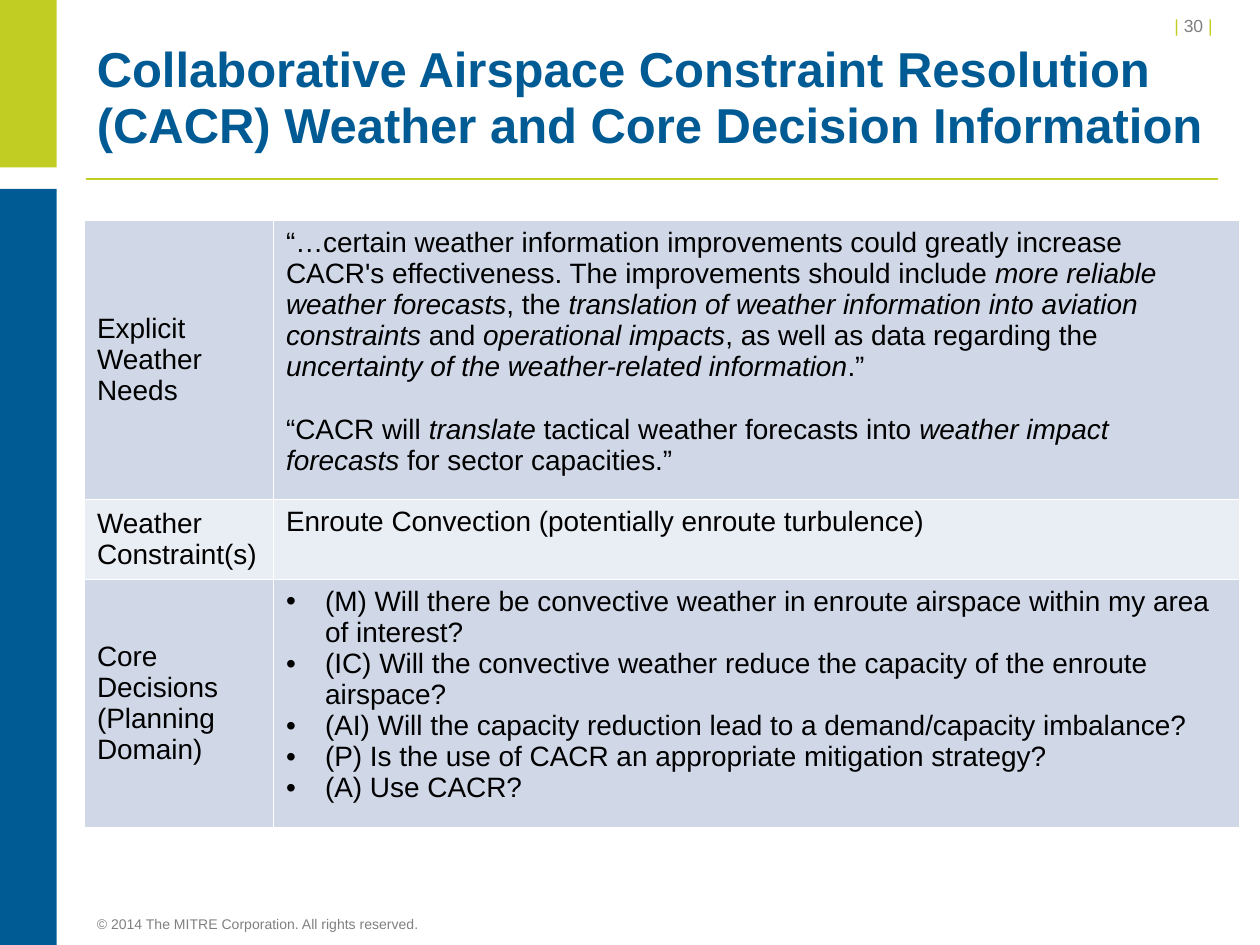
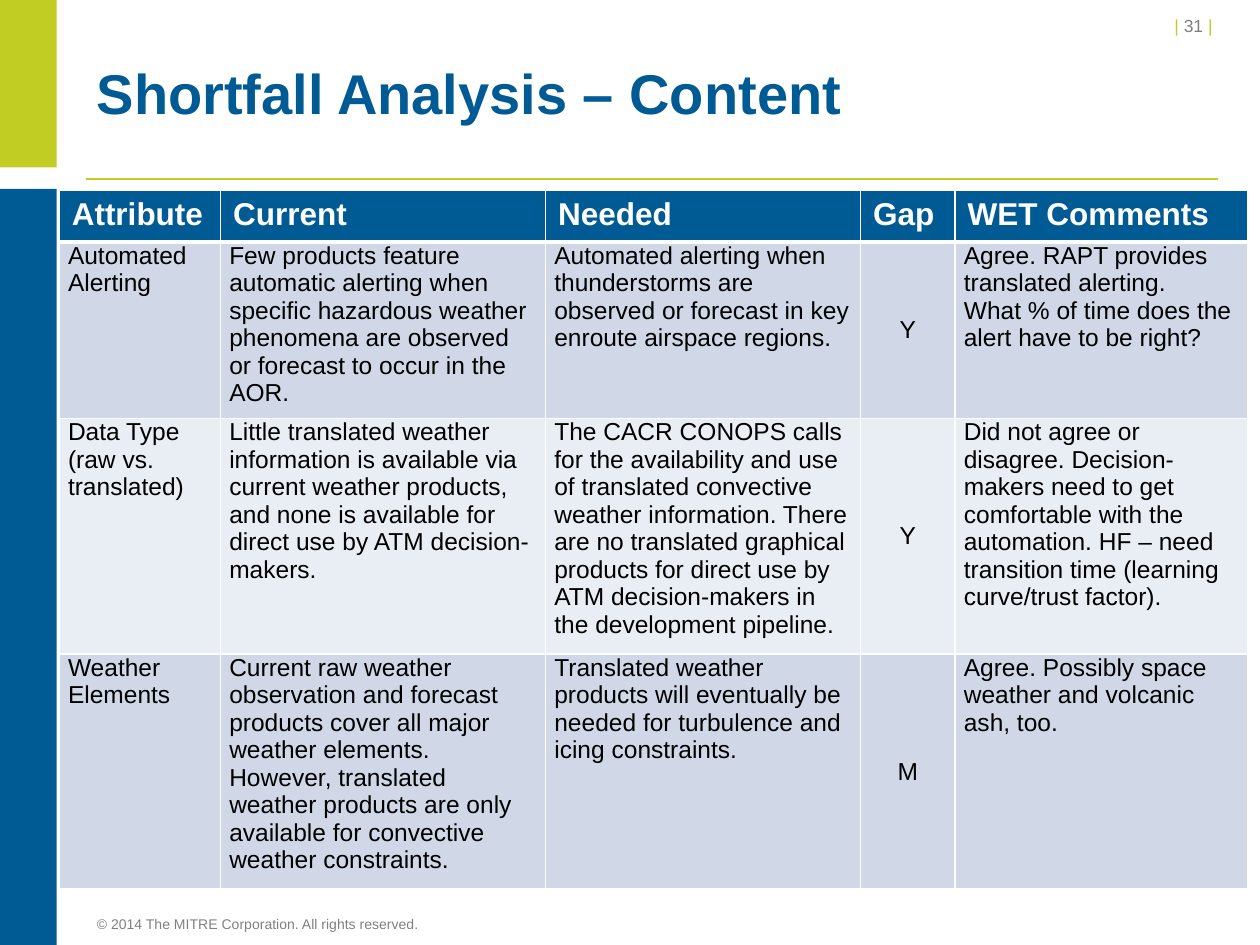
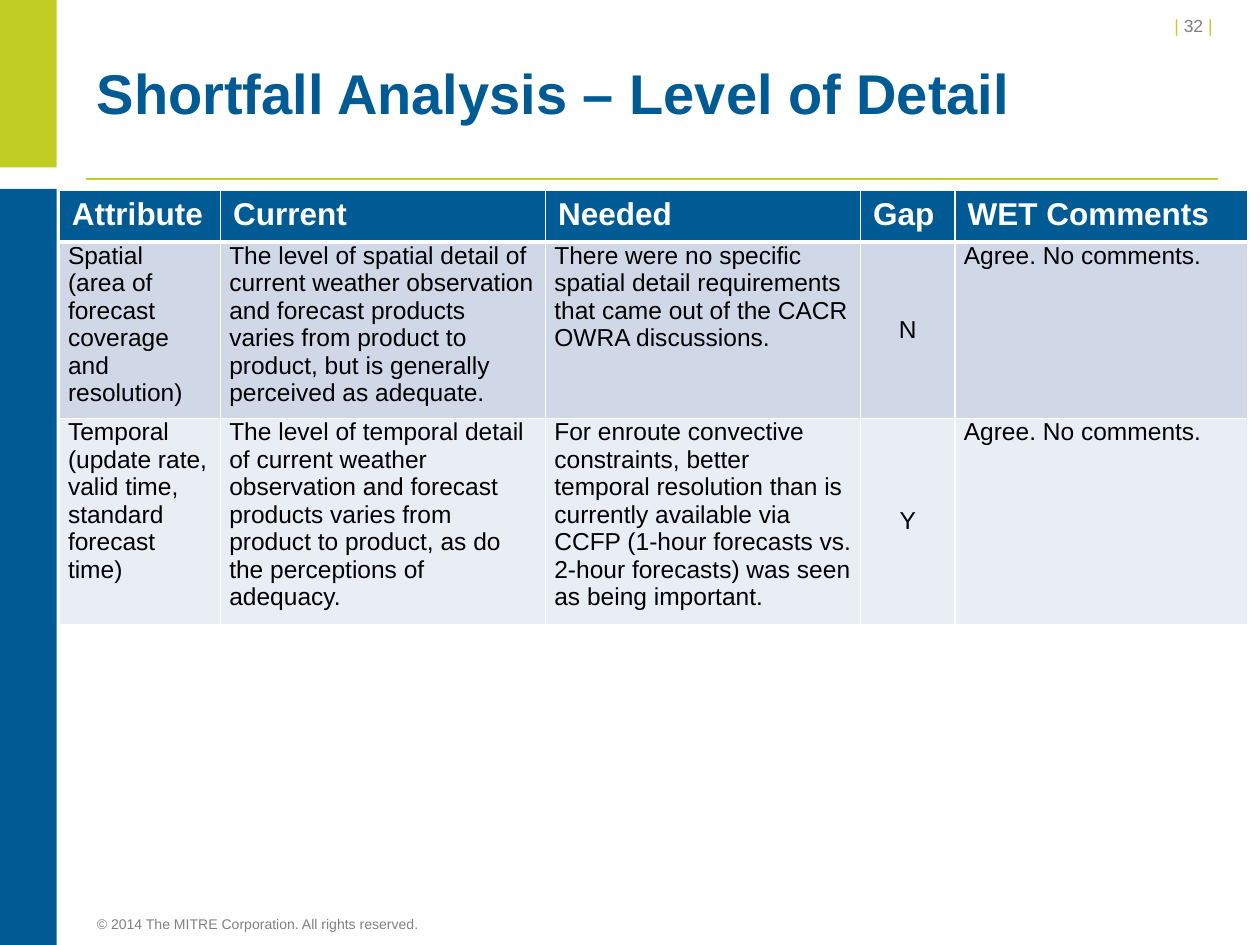
from lxml import etree
from pptx import Presentation
from pptx.dml.color import RGBColor
from pptx.enum.shapes import MSO_CONNECTOR, MSO_SHAPE
from pptx.enum.text import MSO_ANCHOR, PP_ALIGN
from pptx.oxml.ns import qn
from pptx.util import Inches, Pt

COLORS = {
    "lime": "C1CD23",
    "blue": "005B94",
    "gray": "808080",
    "black": "000000",
    "white": "FFFFFF",
    "dark_band": "D0D8E8",
    "light_band": "E9EDF4",
}
FONT = "Arial"
COPYRIGHT = "© 2014 The MITRE Corporation. All rights reserved."

NEEDS_COLUMNS = [1.5, 7.67]
NEEDS_HEIGHTS = [2.07, 0.59, 1.82]
EXPLICIT_NEEDS = [
    "“…certain weather information improvements could greatly increase CACR's "
    "effectiveness. The improvements should include *more reliable weather "
    "forecasts*, the *translation of weather information into aviation "
    "constraints* and *operational impacts*, as well as data regarding the "
    "*uncertainty of the weather-related information*.”",
    "“CACR will *translate* tactical weather forecasts into *weather impact "
    "forecasts *for sector capacities.”",
]
CORE_DECISIONS = [
    "(M) Will there be convective weather in enroute airspace within my area of interest?",
    "(IC) Will the convective weather reduce the capacity of the enroute airspace?",
    "(AI) Will the capacity reduction lead to a demand/capacity imbalance?",
    "(P) Is the use of CACR an appropriate mitigation strategy?",
    "(A) Use CACR?",
]
NEEDS = [
    ("Explicit Weather Needs", EXPLICIT_NEEDS),
    ("Weather Constraint(s)", ["Enroute Convection (potentially enroute turbulence)"]),
    ("Core Decisions (Planning Domain)", CORE_DECISIONS),
]

SHORTFALL_COLUMNS = [1.28, 2.58, 2.5, 0.75, 2.32]
SHORTFALL_HEADINGS = ["Attribute", "Current", "Needed", "Gap", "WET Comments"]
GAP_COLUMN = SHORTFALL_HEADINGS.index("Gap")
HEADING_HEIGHT = 0.41
CONTENT_HEIGHTS = [1.31, 1.75, 1.74]
CONTENT = [
    (
        ["Automated Alerting"],
        ["Few products feature automatic alerting when specific hazardous weather "
         "phenomena are observed or forecast to occur in the AOR."],
        ["Automated alerting when thunderstorms are observed or forecast in key "
         "enroute airspace regions."],
        ["Y"],
        ["Agree. RAPT provides translated alerting.",
         "What % of time does the alert have to be right?"],
    ),
    (
        ["Data Type", "(raw vs. translated)"],
        ["Little translated weather information is available via current weather "
         "products, and none is available for direct use by ATM decision-makers."],
        ["The CACR CONOPS calls for the availability and use of translated "
         "convective weather information. There are no translated graphical "
         "products for direct use by ATM decision-makers in the development pipeline."],
        ["Y"],
        ["Did not agree or disagree. Decision-makers need to get comfortable with "
         "the automation. HF – need transition time (learning curve/trust factor)."],
    ),
    (
        ["Weather Elements"],
        ["Current raw weather observation and forecast products cover all major "
         "weather elements. However, translated weather products are only "
         "available for convective weather constraints."],
        ["Translated weather products will eventually be needed for turbulence "
         "and icing constraints."],
        ["M"],
        ["Agree. Possibly space weather and volcanic ash, too."],
    ),
]
DETAIL_HEIGHTS = [1.31, 1.53]
DETAIL = [
    (
        ["Spatial", "(area of forecast coverage and resolution)"],
        ["The level of spatial detail of current weather observation and forecast "
         "products varies from product to product, but is generally perceived as "
         "adequate."],
        ["There were no specific spatial detail requirements that came out of the "
         "CACR OWRA discussions."],
        ["N"],
        ["Agree. No comments."],
    ),
    (
        ["Temporal", "(update rate, valid time, standard forecast time)"],
        ["The level of temporal detail of current weather observation and forecast "
         "products varies from product to product, as do the perceptions of adequacy."],
        ["For enroute convective constraints, better temporal resolution than is "
         "currently available via CCFP (1-hour forecasts vs. 2-hour forecasts) was "
         "seen as being important."],
        ["Y"],
        ["Agree. No comments."],
    ),
]


def rgb(color):
    return RGBColor.from_string(COLORS[color])


def add_run(paragraph, text, size, color, bold=False, italic=False):
    run = paragraph.add_run()
    run.text = text
    run.font.name = FONT
    run.font.size = Pt(size)
    run.font.bold = bold
    run.font.italic = italic
    run.font.color.rgb = rgb(color)


def add_line_of_text(slide, box, anchor):
    """Add a wrapping text box and return its first paragraph."""
    frame = slide.shapes.add_textbox(*map(Inches, box)).text_frame
    frame.word_wrap = True
    frame.vertical_anchor = anchor
    return frame.paragraphs[0]


def add_band(slide, top, height, color):
    band = slide.shapes.add_shape(
        MSO_SHAPE.RECTANGLE, 0, Inches(top), Inches(0.45), Inches(height))
    band.shadow.inherit = False
    band.fill.solid()
    band.fill.fore_color.rgb = rgb(color)
    band.line.fill.background()


def add_title_rule(slide):
    rule = slide.shapes.add_connector(
        MSO_CONNECTOR.STRAIGHT, Inches(0.68), Inches(1.42), Inches(9.67), Inches(1.42))
    rule.line.color.rgb = rgb("lime")
    rule.line.width = Pt(1)
    etree.SubElement(rule._element.spPr, qn("a:effectLst"))


def add_page_number(slide, number):
    page = add_line_of_text(slide, (8.01, 0.07, 1.75, 0.27), MSO_ANCHOR.TOP)
    page.alignment = PP_ALIGN.RIGHT
    page.space_after = Pt(6)
    for text, color in (("| ", "lime"), (f"{number} ", "gray"), ("| ", "lime")):
        add_run(page, text, 10, color)


def add_framed_slide(deck, number, title, title_size=32):
    """Add a slide with the shared bands, rule, page number, copyright and title."""
    slide = deck.slides.add_slide(deck.slide_layouts[6])
    add_title_rule(slide)
    add_band(slide, 0, 1.33, "lime")
    add_band(slide, 1.5, 6, "blue")
    add_page_number(slide, number)

    copyright_line = add_line_of_text(slide, (0.67, 7.28, 2.95, 0.17), MSO_ANCHOR.BOTTOM)
    copyright_line.line_spacing = Pt(13)
    add_run(copyright_line, COPYRIGHT, 8, "gray")

    heading = add_line_of_text(slide, (0.67, 0.3, 9, 0.95), MSO_ANCHOR.MIDDLE)
    heading.line_spacing = Pt(32)
    add_run(heading, title, title_size, "blue", bold=True)
    return slide


def add_grid(slide, left, top, widths, heights, has_heading):
    grid = slide.shapes.add_table(
        len(heights), len(widths), Inches(left), Inches(top),
        Inches(sum(widths)), Inches(sum(heights))).table
    grid.first_row = has_heading
    grid.horz_banding = False
    for column, width in zip(grid.columns, widths):
        column.width = Inches(width)
    for row, height in zip(grid.rows, heights):
        row.height = Inches(height)
    return grid


def style_cell(cell, fill, top_border=1, bottom_border=1):
    """Give a cell white borders (in points), then its fill."""
    borders = {"lnL": 1, "lnR": 1, "lnT": top_border, "lnB": bottom_border}
    for side, width in borders.items():
        line = etree.SubElement(
            cell._tc.get_or_add_tcPr(), qn(f"a:{side}"), w=str(Pt(width)))
        paint = etree.SubElement(line, qn("a:solidFill"))
        etree.SubElement(paint, qn("a:srgbClr"), val=COLORS["white"])
    cell.fill.solid()
    cell.fill.fore_color.rgb = rgb(fill)


def write_cell(cell, texts, size, color="black", bold=False):
    """Write one paragraph per text; parts between asterisks are italic."""
    frame = cell.text_frame
    for index, text in enumerate(texts):
        paragraph = frame.add_paragraph() if index else frame.paragraphs[0]
        for part_index, part in enumerate(text.split("*")):
            if part:
                add_run(paragraph, part, size, color, bold, part_index % 2 == 1)


def add_bullet(paragraph):
    properties = paragraph._p.get_or_add_pPr()
    properties.set("marL", str(Inches(0.31)))
    properties.set("indent", str(Inches(-0.31)))
    etree.SubElement(properties, qn("a:buFont"), typeface=FONT)
    etree.SubElement(properties, qn("a:buChar"), char="•")


def band_color(row_index):
    return "light_band" if row_index % 2 else "dark_band"


def add_needs_table(slide):
    grid = add_grid(slide, 0.67, 1.75, NEEDS_COLUMNS, NEEDS_HEIGHTS, has_heading=False)
    for row_index, (topic, details) in enumerate(NEEDS):
        topic_cell, details_cell = grid.rows[row_index].cells
        for cell, texts in ((topic_cell, [topic]), (details_cell, details)):
            style_cell(cell, band_color(row_index))
            write_cell(cell, texts, 16)
        topic_cell.vertical_anchor = MSO_ANCHOR.MIDDLE
        if details is EXPLICIT_NEEDS:
            details_cell.text_frame.paragraphs[0].space_after = Pt(18)
        if details is CORE_DECISIONS:
            for decision in details_cell.text_frame.paragraphs:
                add_bullet(decision)


def add_shortfall_table(slide, findings, heights):
    grid = add_grid(slide, 0.47, 1.51, SHORTFALL_COLUMNS,
                    [HEADING_HEIGHT] + heights, has_heading=True)
    for cell, heading in zip(grid.rows[0].cells, SHORTFALL_HEADINGS):
        style_cell(cell, "blue", bottom_border=3)
        write_cell(cell, [heading], 18, "white", bold=True)
    for row_index, finding in enumerate(findings):
        cells = list(grid.rows[row_index + 1].cells)
        for cell, texts in zip(cells, finding):
            style_cell(cell, band_color(row_index), top_border=1 if row_index else 3)
            cell.margin_left = cell.margin_right = Inches(0.07)
            cell.margin_top = cell.margin_bottom = 0
            write_cell(cell, texts, 14)
        gap = cells[GAP_COLUMN]
        gap.vertical_anchor = MSO_ANCHOR.MIDDLE
        gap.text_frame.paragraphs[0].alignment = PP_ALIGN.CENTER


def main():
    deck = Presentation()
    deck.slide_width, deck.slide_height = Inches(10), Inches(7.5)

    needs = add_framed_slide(
        deck, 30, "Collaborative Airspace Constraint Resolution (CACR) "
        "Weather and Core Decision Information", title_size=28)
    add_needs_table(needs)

    content = add_framed_slide(deck, 31, "Shortfall Analysis – Content")
    add_shortfall_table(content, CONTENT, CONTENT_HEIGHTS)

    detail = add_framed_slide(deck, 32, "Shortfall Analysis – Level of Detail")
    add_shortfall_table(detail, DETAIL, DETAIL_HEIGHTS)

    deck.save("out.pptx")


if __name__ == "__main__":
    main()
